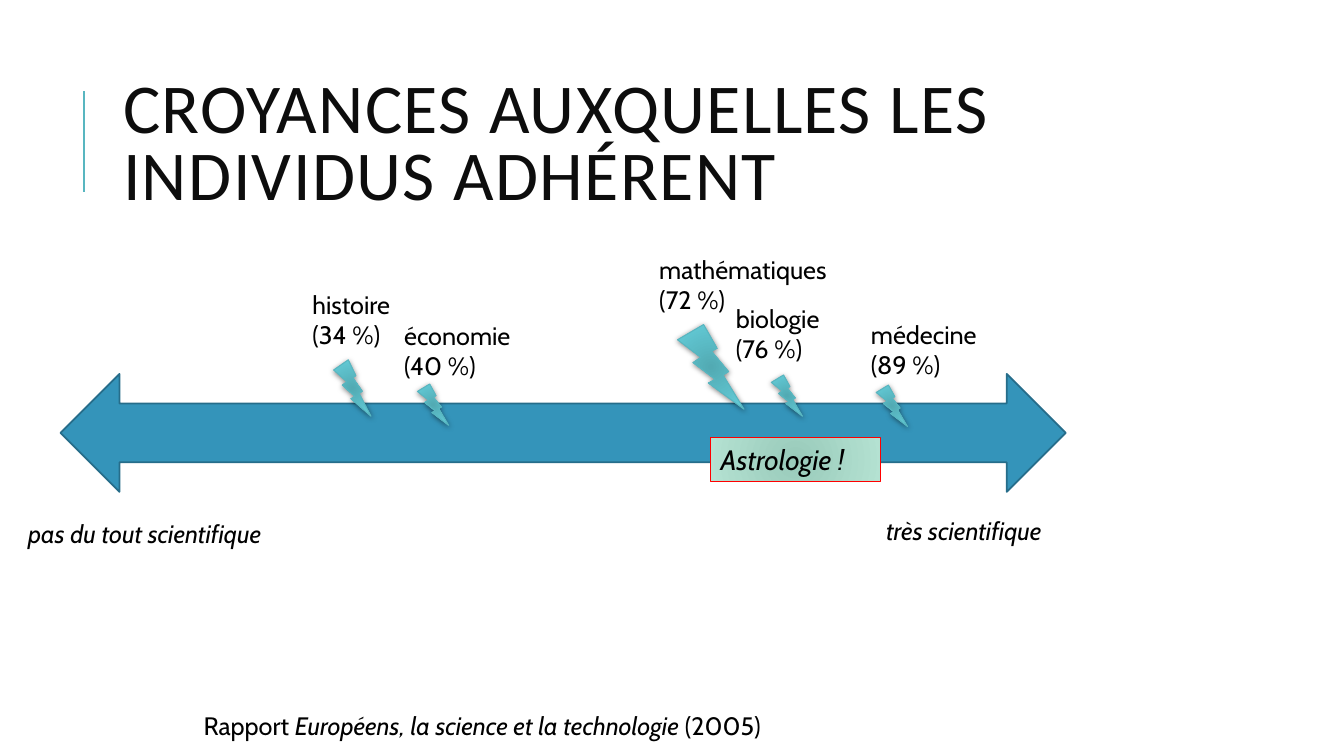
from dataclasses import dataclass

from lxml import etree
from pptx import Presentation
from pptx.dml.color import RGBColor
from pptx.enum.shapes import MSO_CONNECTOR, MSO_SHAPE
from pptx.enum.text import MSO_ANCHOR, MSO_AUTO_SIZE, PP_ALIGN
from pptx.oxml.ns import qn
from pptx.util import Inches, Pt

ARROW = MSO_SHAPE.LEFT_RIGHT_ARROW
BOLT = MSO_SHAPE.LIGHTNING_BOLT
RECT = MSO_SHAPE.RECTANGLE
LINE = MSO_CONNECTOR.STRAIGHT
TOP, MIDDLE = MSO_ANCHOR.TOP, MSO_ANCHOR.MIDDLE
LEFT = PP_ALIGN.LEFT
FIXED = MSO_AUTO_SIZE.NONE


@dataclass(frozen=True)
class Theme:
    head: str = "Calibri"
    body: str = "Cabin"
    title: int = 50
    label: int = 18
    note: int = 20
    ink: str = "0D0D0D"
    black: str = "000000"
    blue: str = "3494BA"
    navy: str = "266D8A"
    teal: str = "58B6C0"
    red: str = "FF0000"
    bolt: tuple = ("52AAB3", "65CFDB")
    mint: tuple = ("99CABA", "B4E2D2")


THEME = Theme()

# Label text, label box, bolt box
FIELDS = [
    ("médecine", "89 %", (8.54, 3.12, 1.38, 0.71), (8.69, 3.82, 0.31, 0.41)),
    ("biologie", "76 %", (7.2, 2.96, 1.17, 0.71), (7.65, 3.72, 0.31, 0.41)),
    ("mathématiques", "72 %", (6.44, 2.47, 2.03, 0.71), (6.72, 3.22, 0.66, 0.84)),
    ("histoire", "34 %", (3, 2.82, 1.13, 0.71), (3.31, 3.57, 0.37, 0.56)),
    ("économie", "40 %", (3.91, 3.13, 1.37, 0.71), (4.14, 3.81, 0.31, 0.41)),
]


def rgb(code):
    return RGBColor.from_string(code)


def apply(item, style):
    for name, value in style.items():
        setattr(item, name, value)


def write(frame, lines, size=THEME.label, face=THEME.body, color=THEME.black,
          anchor=TOP):
    """Fill a frame with lines, each a list of (text, italic) runs."""
    apply(frame, {"word_wrap": True, "auto_size": FIXED,
                  "vertical_anchor": anchor})
    for index, runs in enumerate(lines):
        para = frame.add_paragraph() if index else frame.paragraphs[0]
        para.alignment = LEFT
        for text, slant in runs:
            run = para.add_run()
            run.text = text
            apply(run.font, {"name": face, "size": Pt(size),
                             "italic": slant, "bold": False})
            run.font.color.rgb = rgb(color)


def add_text(slide, box, lines):
    write(slide.shapes.add_textbox(*map(Inches, box)).text_frame, lines)


def add_shape(slide, kind, box, line, width):
    shape = slide.shapes.add_shape(kind, *map(Inches, box))
    shape.shadow.inherit = False
    shape.line.color.rgb = rgb(line)
    shape.line.width = Pt(width)
    return shape


def blend(shape, colors):
    """Give the shape a circular gradient out of its far corner."""
    shape.fill.gradient()
    for stop, color in zip(shape.fill.gradient_stops, colors):
        stop.color.rgb = rgb(color)
    grad = shape._element.spPr.find(qn("a:gradFill"))
    grad.remove(grad.find(qn("a:lin")))
    circle = etree.SubElement(grad, qn("a:path"), path="circle")
    etree.SubElement(circle, qn("a:fillToRect"),
                     dict.fromkeys("ltrb", "100000"))


def add_bolt(slide, box):
    bolt = add_shape(slide, BOLT, box, THEME.teal, 0.75)
    blend(bolt, THEME.bolt)
    effects = bolt._element.spPr.find(qn("a:effectLst"))
    shade = etree.SubElement(
        effects, qn("a:outerShdw"), blurRad=str(Pt(4)), dist=str(Pt(1)),
        dir="5400000", rotWithShape="0")
    color = etree.SubElement(shade, qn("a:srgbClr"), val=THEME.black)
    etree.SubElement(color, qn("a:alpha"), val="50000")


def add_title(slide, text):
    rule = slide.shapes.add_connector(
        LINE, *map(Inches, (0.83, 1.9, 0.83, 0.9)))
    rule.line.color.rgb = rgb(THEME.teal)
    rule.line.width = Pt(1.5)
    etree.SubElement(rule._element.spPr, qn("a:effectLst"))
    title = slide.shapes.title
    spots = ("left", "top", "width", "height")
    apply(title, dict(zip(spots, map(Inches, (1.12, 0.64, 11.07, 1.64)))))
    write(title.text_frame, [[(text, False)]], THEME.title, THEME.head,
          THEME.ink, MIDDLE)
    para = title.text_frame.paragraphs[0]
    para.line_spacing = 0.8
    para.runs[0].font._element.set("spc", "100")


def main():
    deck = Presentation()
    apply(deck, {"slide_width": Inches(13.33), "slide_height": Inches(7.5)})
    slide = deck.slides.add_slide(deck.slide_layouts[5])
    add_title(slide, "CROYANCES AUXQUELLES LES INDIVIDUS ADHÉRENT")

    scale = add_shape(slide, ARROW, (0.6, 3.71, 9.97, 1.17), THEME.navy, 1.25)
    scale.fill.solid()
    scale.fill.fore_color.rgb = rgb(THEME.blue)
    add_text(slide, (0.18, 5.09, 2.99, 0.4),
             [[("pas du tout scientifique", True)]])
    add_text(slide, (8.69, 5.06, 2.07, 0.4), [[("très scientifique", True)]])

    for name, share, box, _ in FIELDS:
        add_text(slide, box, [[(name, False)], [(f"({share})", False)]])

    note = add_shape(slide, RECT, (7.05, 4.34, 1.68, 0.44), THEME.red, 0.75)
    blend(note, THEME.mint)
    write(note.text_frame, [[("Astrologie !", True)]], THEME.note)

    add_text(slide, (1.92, 7, 6.49, 0.4), [[
        ("Rapport ", False),
        ("Européens, la science et la technologie", True),
        (" (2005)", False)]])

    for *_, box in FIELDS:
        add_bolt(slide, box)
    deck.save("out.pptx")


if __name__ == "__main__":
    main()
